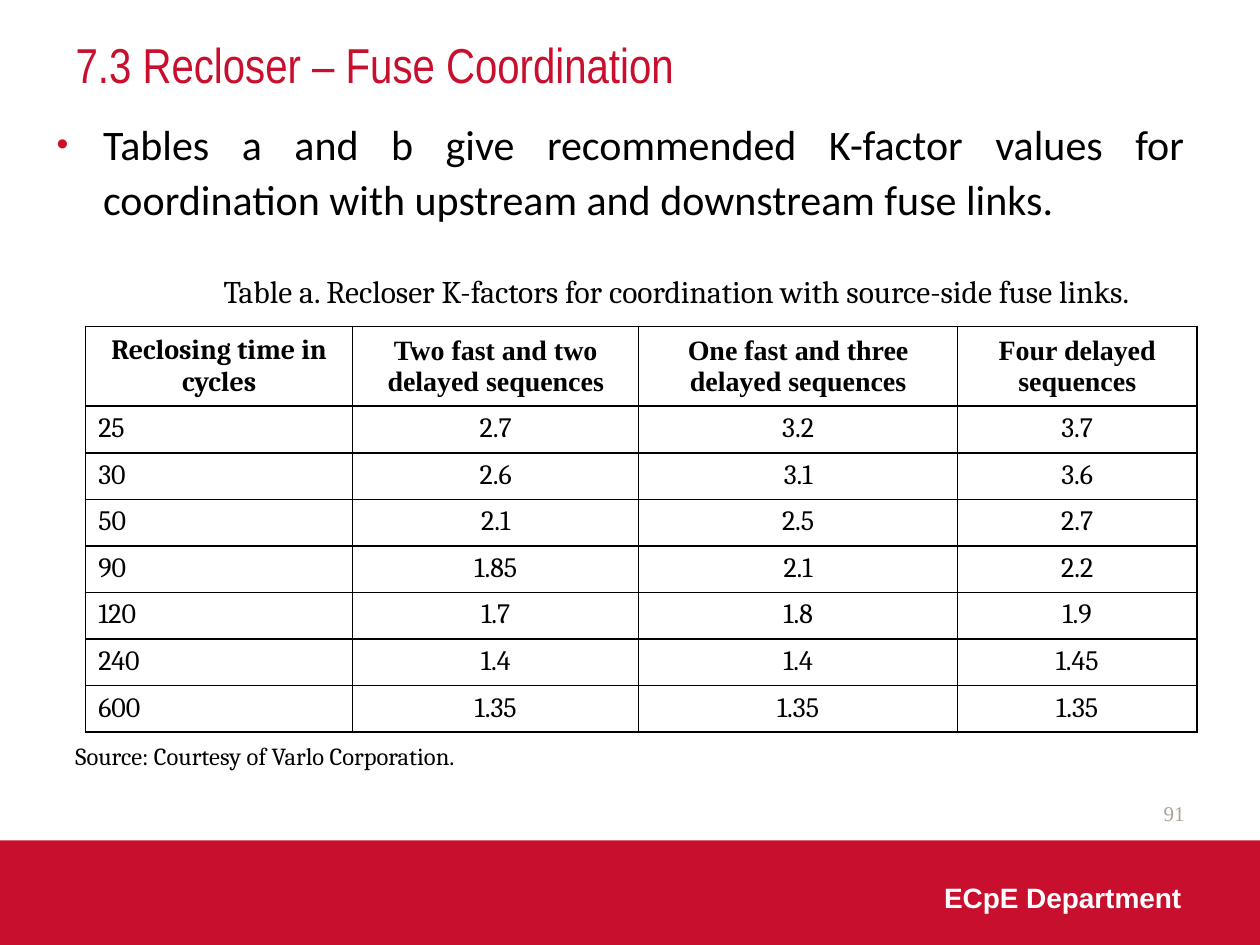
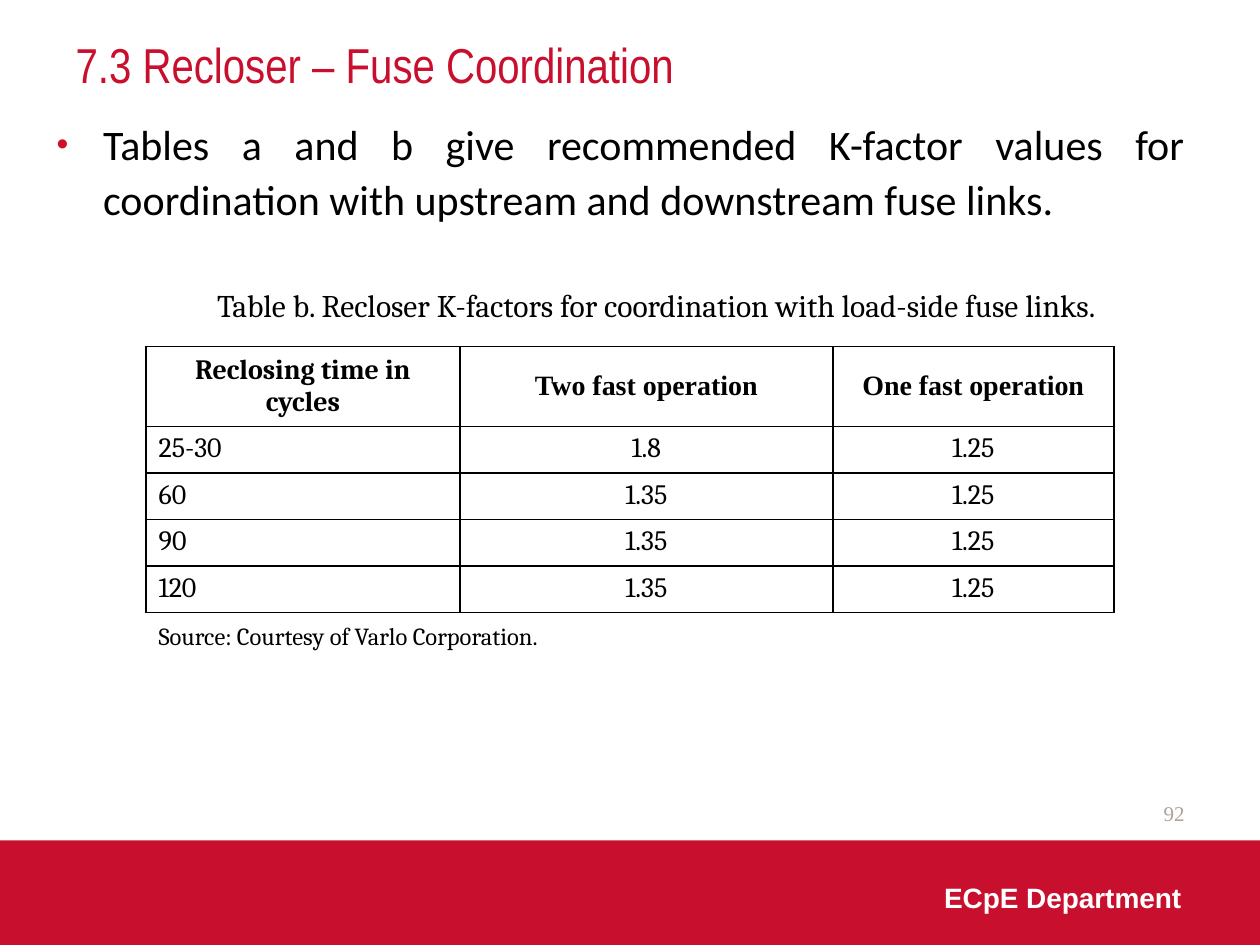
"""Build two slides of recloser K-factor tables for fuse coordination."""
from dataclasses import dataclass

from lxml.etree import SubElement
from pptx import Presentation
from pptx.dml.color import RGBColor
from pptx.enum.shapes import MSO_SHAPE
from pptx.enum.text import MSO_ANCHOR, MSO_AUTO_SIZE, PP_ALIGN
from pptx.oxml.ns import qn
from pptx.util import Inches, Pt

TITLE = "7.3 Recloser – Fuse Coordination"
INTRODUCTION = (
    "Tables a and b give recommended K-factor values for coordination "
    "with upstream and downstream fuse links."
)
DEPARTMENT = "ECpE Department"
SOURCE = "Source: Courtesy of Varlo Corporation."

SLIDES = [
    {
        "number": "91",
        "caption": "Table a. Recloser K-factors for coordination with source-side fuse links.",
        "caption_at": (0.9, 2.11),
        "table_at": (0.68, 2.59),
        "source_at": (0.5, 5.83),
        "column_widths": [2.12, 2.27, 2.53, 1.9],
        "rows": [
            ("Reclosing time in cycles", "Two fast and two delayed sequences",
             "One fast and three delayed sequences", "Four delayed sequences"),
            ("25", "2.7", "3.2", "3.7"),
            ("30", "2.6", "3.1", "3.6"),
            ("50", "2.1", "2.5", "2.7"),
            ("90", "1.85", "2.1", "2.2"),
            ("120", "1.7", "1.8", "1.9"),
            ("240", "1.4", "1.4", "1.45"),
            ("600", "1.35", "1.35", "1.35"),
        ],
    },
    {
        "number": "92",
        "caption": "Table b. Recloser K-factors for coordination with load-side fuse links.",
        "caption_at": (0.74, 2.22),
        "table_at": (1.16, 2.75),
        "source_at": (1.16, 4.88),
        "column_widths": [2.49, 2.96, 2.23],
        "rows": [
            ("Reclosing time in cycles", "Two fast operation", "One fast operation"),
            ("25-30", "1.8", "1.25"),
            ("60", "1.35", "1.25"),
            ("90", "1.35", "1.25"),
            ("120", "1.35", "1.25"),
        ],
    },
]

HEADER_HEIGHT, ROW_HEIGHT = 0.57, 0.37


@dataclass(frozen=True)
class TextStyle:
    """Font, size, colour and weight of one kind of text."""
    name: str
    size: int
    color: str = "000000"
    bold: bool = False


@dataclass(frozen=True)
class Theme:
    """Colours and text styles shared by the slides."""
    red: str = "C8102E"
    bullet: str = "CE1126"
    border: str = "000000"
    title: TextStyle = TextStyle("Arial Narrow", 28, "C8102E")
    body: TextStyle = TextStyle("Calibri", 24)
    caption: TextStyle = TextStyle("Cambria", 18)
    source: TextStyle = TextStyle("Cambria", 14)
    first_header: TextStyle = TextStyle("Cambria", 16, bold=True)
    header: TextStyle = TextStyle("Times New Roman", 16, bold=True)
    value: TextStyle = TextStyle("Cambria", 16)
    number: TextStyle = TextStyle("Times New Roman", 12, "ACA39A")
    department: TextStyle = TextStyle("Arial", 16, "FFFFFF", True)


THEME = Theme()


def write(text_frame, text, style, alignment=PP_ALIGN.LEFT):
    """Put one styled paragraph in a text frame and return it."""
    text_frame.text = text
    paragraph = text_frame.paragraphs[0]
    paragraph.alignment = alignment
    font = paragraph.font
    font.name, font.size, font.bold = style.name, Pt(style.size), style.bold
    font.color.rgb = RGBColor.from_string(style.color)
    return paragraph


def add_text(slide, box, text, style, alignment=PP_ALIGN.LEFT, anchor=MSO_ANCHOR.TOP):
    """Add a wrapping text box and return its paragraph."""
    text_frame = slide.shapes.add_textbox(*map(Inches, box)).text_frame
    text_frame.word_wrap = True
    text_frame.vertical_anchor = anchor
    return write(text_frame, text, style, alignment)


def add_title(slide):
    """Place and fill the title placeholder."""
    title = slide.shapes.title
    title.left, title.top, title.width, title.height = map(Inches, (0.5, 0.17, 9, 0.68))
    title.text_frame.auto_size = MSO_AUTO_SIZE.NONE
    title.text_frame.vertical_anchor = MSO_ANCHOR.MIDDLE
    write(title.text_frame, TITLE, THEME.title)


def add_band(slide):
    """Draw the red band at the foot of the slide."""
    band = slide.shapes.add_shape(MSO_SHAPE.RECTANGLE, *map(Inches, (0, 6.67, 10, 0.83)))
    band.shadow.inherit = False
    band.fill.solid()
    band.fill.fore_color.rgb = RGBColor.from_string(THEME.red)
    band.line.fill.background()


def add_introduction(slide):
    """Add the justified, bulleted sentence above the table."""
    paragraph = add_text(slide, (0.35, 0.85, 9.15, 5.99), INTRODUCTION,
                         THEME.body, PP_ALIGN.JUSTIFY)
    paragraph.line_spacing = 1.1
    paragraph.space_after = Pt(12)
    properties = paragraph._p.get_or_add_pPr()
    properties.set("marL", str(Inches(0.37)))
    properties.set("indent", str(-Inches(0.37)))
    bullet = [
        properties.makeelement(qn("a:buClr"), {}),
        properties.makeelement(qn("a:buSzPct"), {"val": "80000"}),
        properties.makeelement(qn("a:buFont"), {"typeface": "Arial"}),
        properties.makeelement(qn("a:buChar"), {"char": "•"}),
    ]
    SubElement(bullet[0], qn("a:srgbClr"), val=THEME.bullet)
    default_run = properties.find(qn("a:defRPr"))
    for element in bullet:
        default_run.addprevious(element)


def add_borders(cell):
    """Give a cell a one-point line on each side."""
    properties = cell._tc.get_or_add_tcPr()
    for side in ("lnL", "lnR", "lnT", "lnB"):
        line = SubElement(properties, qn(f"a:{side}"), w=str(Pt(1)))
        fill = SubElement(line, qn("a:solidFill"))
        SubElement(fill, qn("a:srgbClr"), val=THEME.border)


def add_factor_table(slide, content):
    """Add the K-factor table."""
    rows, widths = content["rows"], content["column_widths"]
    heights = [HEADER_HEIGHT] + [ROW_HEIGHT] * (len(rows) - 1)
    size = (sum(widths), sum(heights))
    table = slide.shapes.add_table(
        len(rows), len(widths), *map(Inches, content["table_at"] + size)).table
    table.horz_banding = False
    for column, width in zip(table.columns, widths):
        column.width = Inches(width)
    for row, height in zip(table.rows, heights):
        row.height = Inches(height)
    for row_index, row in enumerate(rows):
        for column_index, text in enumerate(row):
            cell = table.cell(row_index, column_index)
            is_header, is_first = row_index == 0, column_index == 0
            style = THEME.value
            if is_header:
                style = THEME.first_header if is_first else THEME.header
                cell.vertical_anchor = MSO_ANCHOR.MIDDLE
            centred = is_header or not is_first
            write(cell.text_frame, text, style,
                  PP_ALIGN.CENTER if centred else PP_ALIGN.LEFT)
            add_borders(cell)
            cell.fill.background()


def build_slide(presentation, content):
    """Add one slide with its shared parts and its table."""
    slide = presentation.slides.add_slide(presentation.slide_layouts[5])
    add_band(slide)
    add_title(slide)
    add_introduction(slide)
    add_text(slide, (7.17, 6.25, 2.33, 0.4), content["number"], THEME.number,
             PP_ALIGN.RIGHT, MSO_ANCHOR.MIDDLE)
    add_text(slide, (7.37, 6.92, 2.13, 0.4), DEPARTMENT, THEME.department,
             PP_ALIGN.CENTER, MSO_ANCHOR.MIDDLE)
    add_factor_table(slide, content)
    add_text(slide, content["caption_at"] + (8.94, 0.4), content["caption"],
             THEME.caption, PP_ALIGN.CENTER)
    add_text(slide, content["source_at"] + (5.78, 0.34), SOURCE, THEME.source)


def main():
    """Build and save the presentation."""
    presentation = Presentation()
    presentation.slide_width, presentation.slide_height = Inches(10), Inches(7.5)
    for content in SLIDES:
        build_slide(presentation, content)
    presentation.save("out.pptx")


if __name__ == "__main__":
    main()
